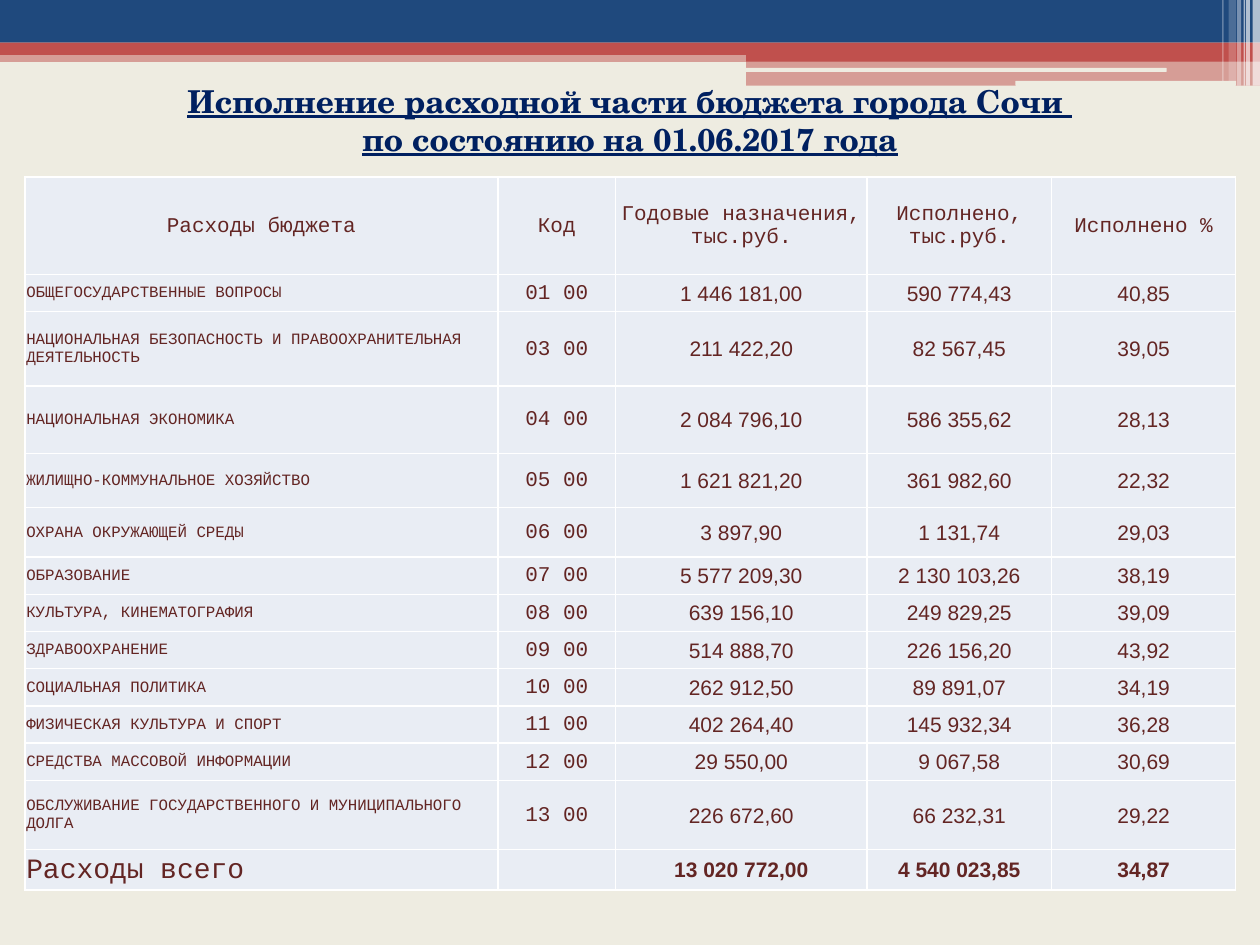
from lxml import etree
from pptx import Presentation
from pptx import util as u
from pptx.dml.color import RGBColor
from pptx.enum import shapes, text
from pptx.oxml.ns import qn

BLUE, RED, CREAM, WHITE = "1F497D", "C0504D", "EEECE1", "FFFFFF"
NAVY, BROWN, CELL = "002060", "632523", "E9EDF4"
MONO, SANS, SERIF = "Courier New", "Arial", "TeX Gyre Schola"

COLUMNS = [9.54, 2.37, 5.07, 3.72, 3.71]
HEADINGS = ["Расходы бюджета", "Код", "Годовые назначения, тыс.руб.",
            "Исполнено, тыс.руб.", "Исполнено %"]
# Row height in cm, then the cells
EXPENSES = [
    (0.75, "ОБЩЕГОСУДАРСТВЕННЫЕ ВОПРОСЫ", "01 00", "1 446 181,00", "590 774,43", "40,85"),
    (1.5, "НАЦИОНАЛЬНАЯ БЕЗОПАСНОСТЬ И ПРАВООХРАНИТЕЛЬНАЯ ДЕЯТЕЛЬНОСТЬ", "03 00",
     "211 422,20", "82 567,45", "39,05"),
    (1.36, "НАЦИОНАЛЬНАЯ ЭКОНОМИКА", "04 00", "2 084 796,10", "586 355,62", "28,13"),
    (1.09, "ЖИЛИЩНО-КОММУНАЛЬНОЕ ХОЗЯЙСТВО", "05 00", "1 621 821,20", "361 982,60", "22,32"),
    (1, "ОХРАНА ОКРУЖАЮЩЕЙ СРЕДЫ", "06 00", "3 897,90", "1 131,74", "29,03"),
    (0.75, "ОБРАЗОВАНИЕ", "07 00", "5 577 209,30", "2 130 103,26", "38,19"),
    (0.75, "КУЛЬТУРА, КИНЕМАТОГРАФИЯ", "08 00", "639 156,10", "249 829,25", "39,09"),
    (0.75, "ЗДРАВООХРАНЕНИЕ", "09 00", "514 888,70", "226 156,20", "43,92"),
    (0.75, "СОЦИАЛЬНАЯ ПОЛИТИКА", "10 00", "262 912,50", "89 891,07", "34,19"),
    (0.75, "ФИЗИЧЕСКАЯ КУЛЬТУРА И СПОРТ", "11 00", "402 264,40", "145 932,34", "36,28"),
    (0.75, "СРЕДСТВА МАССОВОЙ ИНФОРМАЦИИ", "12 00", "29 550,00", "9 067,58", "30,69"),
    (1.4, "ОБСЛУЖИВАНИЕ ГОСУДАРСТВЕННОГО И МУНИЦИПАЛЬНОГО ДОЛГА", "13 00",
     "226 672,60", "66 232,31", "29,22"),
]
TOTAL = ["Расходы всего", "", "13 020 772,00", "4 540 023,85", "34,87"]


def paint(fill, colour, opacity=100):
    fill.solid()
    fill.fore_color.rgb = RGBColor.from_string(colour)
    if opacity < 100:
        tint = fill._xPr.find(qn("a:solidFill"))[0]
        etree.SubElement(tint, qn("a:alpha"), val=str(opacity * 1000))


def write(frame, lines, font=SANS, size=12, colour=BROWN, bold=False,
          underline=False, align=text.PP_ALIGN.CENTER):
    frame.word_wrap = True
    for index, line in enumerate(lines):
        para = frame.add_paragraph() if index else frame.paragraphs[0]
        para.alignment = align
        span = para.add_run()
        span.text = line
        span.font.name, span.font.size = font, u.Pt(size)
        span.font.bold, span.font.underline = bold, underline
        span.font.color.rgb = RGBColor.from_string(colour)


def add_header(page, left, top, width):
    def stripe(x, y, wide, high, colour, opacity=100,
               kind=shapes.MSO_SHAPE.RECTANGLE):
        box = page.shapes.add_shape(kind, u.Cm(left + x), u.Cm(top + y),
                                    u.Cm(wide), u.Cm(high))
        box.shadow.inherit = False
        box.line.fill.background()
        paint(box.fill, colour, opacity)

    # Full-width bands
    stripe(0, 1.02, width, 0.23, RED, 50)
    stripe(0, 0, width, 0.86, BLUE)
    stripe(0, 0.86, width, 0.25, RED)
    # Step on the right with its light slots
    step = 15.04
    stripe(step, 0.99, width - step, 0.25, RED)
    stripe(step, 1.22, width - step, 0.51, RED, 50)
    for x, y, wide, high in [(15.01, 1.37, 8.51, 0.08), (20.47, 1.63, 4.45, 0.1)]:
        stripe(x, y, wide, high, CREAM, kind=shapes.MSO_SHAPE.ROUNDED_RECTANGLE)
    # Translucent vertical bars, measured from the right edge
    for inset, wide, high, opacity in [
            (0.15, 0.15, 1.73, 65), (0.28, 0.08, 1.73, 65), (0.33, 0.03, 1.73, 60),
            (0.46, 0.08, 1.73, 40), (0.63, 0.15, 1.63, 20), (0.76, 0.03, 1.63, 30)]:
        stripe(width - inset, 0, wide, high, WHITE, opacity)


def add_title(page, left, top, width, height):
    title = page.shapes.title
    title.left, title.top = u.Cm(left), u.Cm(top)
    title.width, title.height = u.Cm(width), u.Cm(height)
    frame = title.text_frame
    frame.auto_size = text.MSO_AUTO_SIZE.NONE
    frame.vertical_anchor = text.MSO_ANCHOR.TOP
    write(frame, ["Исполнение расходной части бюджета города Сочи ",
                  "по состоянию на 01.06.2017 года"],
          font=SERIF, size=18, colour=NAVY, bold=True, underline=True)
    # Bring the title in front of the header
    title.element.getparent().append(title.element)


def style_cell(cell):
    cell.margin_left = cell.margin_right = cell.margin_top = u.Cm(0.03)
    cell.margin_bottom = 0
    cell.vertical_anchor = text.MSO_ANCHOR.MIDDLE
    properties = cell._tc.get_or_add_tcPr()
    for side in ("a:lnL", "a:lnR", "a:lnT", "a:lnB"):
        line = etree.SubElement(properties, qn(side), w=str(u.Pt(1)))
        solid = etree.SubElement(line, qn("a:solidFill"))
        etree.SubElement(solid, qn("a:srgbClr"), val=WHITE)
    paint(cell.fill, CELL)


def add_budget_table(page, left, top):
    rows = [(1.96, *HEADINGS), *EXPENSES, (0.81, *TOTAL)]
    height = sum(row[0] for row in rows)
    table = page.shapes.add_table(len(rows), len(COLUMNS), u.Cm(left), u.Cm(top),
                                  u.Cm(sum(COLUMNS)), u.Cm(height)).table
    table.first_row = table.horz_banding = False
    for column, width in zip(table.columns, COLUMNS):
        column.width = u.Cm(width)
    last = len(rows) - 1
    for r, (height, *values) in enumerate(rows):
        table.rows[r].height = u.Cm(height)
        for c, value in enumerate(values):
            cell = table.cell(r, c)
            style_cell(cell)
            if not value:
                continue
            if r == 0 or c == 1:      # headings and codes
                look = dict(font=MONO)
            elif c == 0:              # expense names
                look = dict(font=MONO, size=16 if r == last else 9,
                            align=text.PP_ALIGN.LEFT)
            else:                     # amounts
                look = dict(bold=r == last)
            write(cell.text_frame, [value], **look)


def main():
    deck = Presentation()
    deck.slide_width, deck.slide_height = u.Cm(25.4), u.Cm(19.05)
    page = deck.slides.add_slide(deck.slide_layouts[5])
    paint(page.background.fill, CREAM)
    add_header(page, 0, 0, 25.4)
    add_budget_table(page, 0.5, 3.57)
    add_title(page, 0.5, 1.52, 24.4, 1.8)
    deck.save("out.pptx")


if __name__ == "__main__":
    main()
